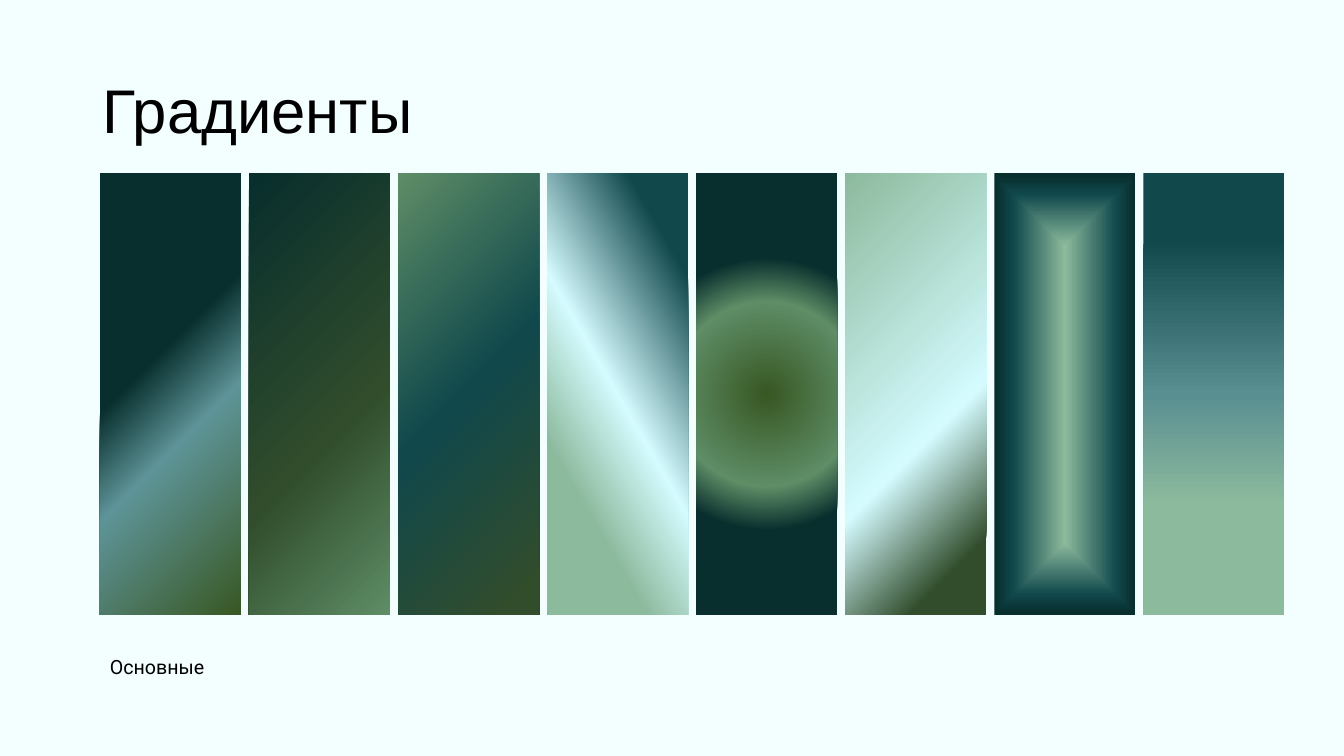
from dataclasses import dataclass

from lxml.etree import SubElement
from pptx import Presentation
from pptx.dml.color import RGBColor
from pptx.enum.shapes import MSO_SHAPE as Preset
from pptx.enum.text import MSO_ANCHOR as Anchor, MSO_AUTO_SIZE as AutoSize, PP_ALIGN as Align
from pptx.oxml.ns import qn
from pptx.util import Inches, Pt


@dataclass(frozen=True)
class Theme:
    background: str = "F3FEFF"
    text: str = "000000"
    title_font: str = "Arial"
    caption_font: str = "Roboto"
    title_size: int = 44
    caption_size: int = 14
    olive: str = "385723"
    moss: str = "314D2C"
    fern: str = "5E8D66"
    sage: str = "8CBA9D"
    ice: str = "D5FBFF"
    steel: str = "5E9498"
    haze: str = "5A8F92"
    teal: str = "10484C"
    night: str = "082E2D"


@dataclass(frozen=True)
class Grid:
    """Equal columns between two margins, in inches."""
    left: float = 0.99
    right: float = 12.74
    top: float = 1.72
    height: float = 4.38
    gap: float = 0.08

    def column(self, index, count):
        width = (self.right - self.left - self.gap * (count - 1)) / count
        return self.left + index * (width + self.gap), self.top, width, self.height


THEME = Theme()
GRID = Grid()

# Focus of a path gradient: left, top, right and bottom insets in percent
BOTTOM_RIGHT = (100, 100, 0, 0)
CENTRE = (50, 50, 50, 50)
TOP_LEFT = (0, 0, 100, 100)

# Each strip: colour stops, then an angle or a path with its focus
STRIPS = [
    ([(0, THEME.olive), (40, THEME.steel), (59, THEME.night)], ("circle", BOTTOM_RIGHT)),
    ([(0, THEME.fern), (40, THEME.moss), (100, THEME.night)], ("circle", BOTTOM_RIGHT)),
    ([(0, THEME.fern), (49, THEME.teal), (94, THEME.moss)], 45),
    ([(15, THEME.teal), (50, THEME.ice), (75, THEME.sage)], 150),
    ([(0, THEME.olive), (40, THEME.fern), (59, THEME.night)], ("circle", CENTRE)),
    ([(0, THEME.sage), (60, THEME.ice), (87, THEME.moss)], ("circle", TOP_LEFT)),
    ([(0, THEME.sage), (73, THEME.teal), (99, THEME.night)], ("shape", CENTRE)),
    ([(15, THEME.teal), (50, THEME.haze), (75, THEME.sage)], 90),
]


def set_attributes(target, formats):
    for name, value in formats.items():
        setattr(target, name, value)


def place(shape, left, top, width, height):
    box = {"left": left, "top": top, "width": width, "height": height}
    set_attributes(shape, {name: Inches(value) for name, value in box.items()})


def fill_placeholder(holder, wording, box, anchor, font_name, size):
    place(holder, *box)
    frame = holder.text_frame
    frame.text = wording
    set_attributes(frame, {"vertical_anchor": anchor, "word_wrap": True,
                           "auto_size": AutoSize.NONE})
    paragraph = frame.paragraphs[0]
    set_attributes(paragraph, {"alignment": Align.LEFT, "line_spacing": 0.9,
                               "space_before": Pt(0)})
    properties = paragraph._p.get_or_add_pPr()
    properties.set("marL", "0")
    properties.set("indent", "0")
    SubElement(properties, qn("a:buNone"))
    font = paragraph.runs[0].font
    set_attributes(font, {"name": font_name, "size": Pt(size)})
    font.color.rgb = RGBColor.from_string(THEME.text)


def apply_gradient(shape, stops, direction):
    """Direction is an angle in degrees, or a path name with its focus."""
    shape.fill.gradient()
    gradient = shape._element.spPr.find(qn("a:gradFill"))
    for child in list(gradient):
        gradient.remove(child)
    stop_list = SubElement(gradient, qn("a:gsLst"))
    for position, colour in stops:
        stop = SubElement(stop_list, qn("a:gs"), pos=str(position * 1000))
        SubElement(stop, qn("a:srgbClr"), val=colour)
    if isinstance(direction, tuple):
        outline, focus = direction
        course = SubElement(gradient, qn("a:path"), path=outline)
        insets = {side: str(share * 1000) for side, share in zip("ltrb", focus) if share}
        SubElement(course, qn("a:fillToRect"), insets)
    else:
        SubElement(gradient, qn("a:lin"), ang=str(direction * 60000), scaled="0")


def add_strip(slide, index, stops, direction):
    box = (Inches(value) for value in GRID.column(index, len(STRIPS)))
    strip = slide.shapes.add_shape(Preset.RECTANGLE, *box)
    strip.shadow.inherit = False
    strip.line.fill.background()
    apply_gradient(strip, stops, direction)


def main():
    deck = Presentation()
    set_attributes(deck, {"slide_width": Inches(13.33), "slide_height": Inches(7.5)})
    slide = deck.slides.add_slide(deck.slide_layouts[1])
    backdrop = slide.background.fill
    backdrop.solid()
    backdrop.fore_color.rgb = RGBColor.from_string(THEME.background)

    title, caption = slide.placeholders
    fill_placeholder(title, "Градиенты", (0.92, 0.4, 11.5, 1.45), Anchor.MIDDLE,
                     THEME.title_font, THEME.title_size)
    fill_placeholder(caption, "Основные", (GRID.left, 6.47, 1.31, 0.75), Anchor.TOP,
                     THEME.caption_font, THEME.caption_size)
    for index, (stops, direction) in enumerate(STRIPS):
        add_strip(slide, index, stops, direction)
    deck.save("out.pptx")


if __name__ == "__main__":
    main()
